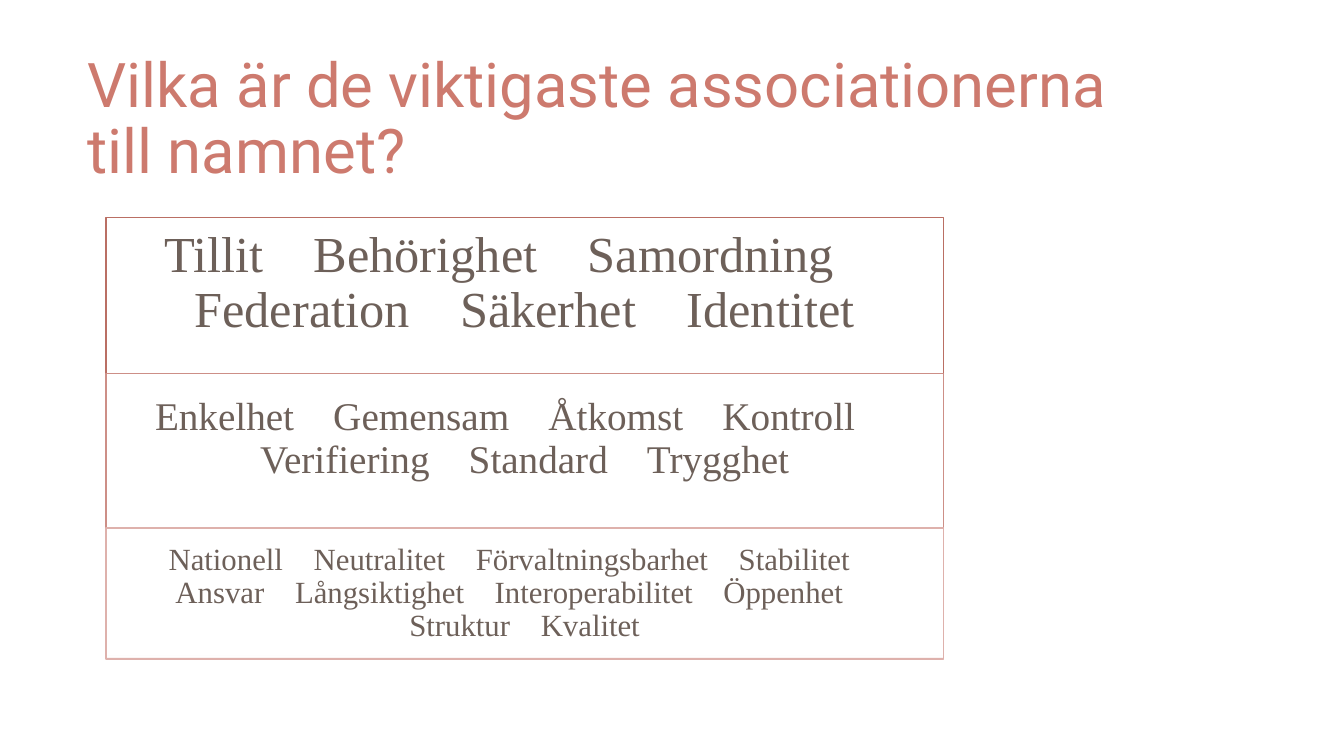
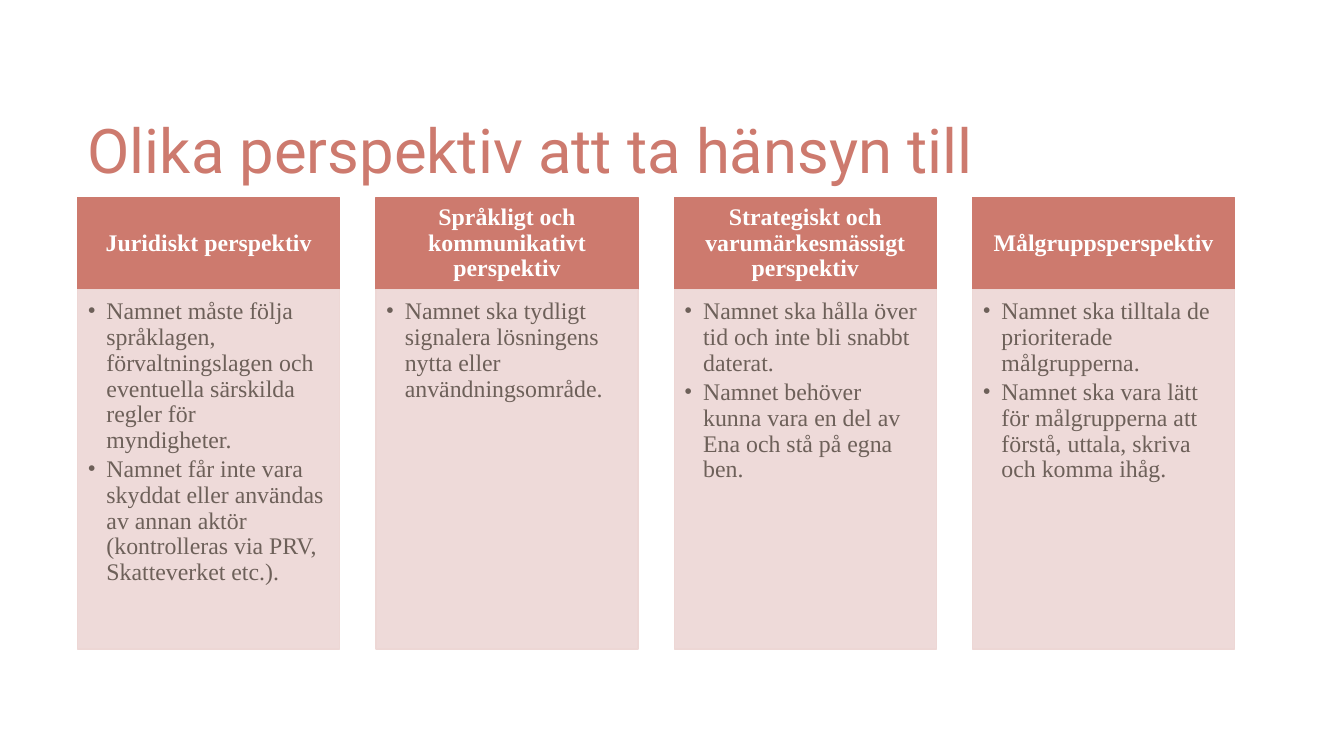
from lxml import etree
from pptx import Presentation
from pptx.dml.color import RGBColor
from pptx.enum.shapes import MSO_SHAPE
from pptx.enum.text import MSO_ANCHOR, PP_ALIGN
from pptx.oxml.ns import qn
from pptx.util import Pt

RECTANGLE = MSO_SHAPE.RECTANGLE
TOP, MIDDLE, BOTTOM = MSO_ANCHOR.TOP, MSO_ANCHOR.MIDDLE, MSO_ANCHOR.BOTTOM
LEFT, CENTER = PP_ALIGN.LEFT, PP_ALIGN.CENTER

TITLE_FONT, BODY_FONT = "Roboto", "Times New Roman"
CORAL, PALE_PINK, BROWN, WHITE = "CD7A6E", "EDD7D5", "6D6059", "FFFFFF"

MARGIN_LEFT = 55.5
LINE_SPACING = 0.9
BULLET_INDENT = 13.5

TIER_LEFT, TIER_WIDTH = 75.6, 598.3
# top, height, line colour, inset, bottom inset, text size, words
TIERS = [
    (155.5, 312.9, "BA6F64", 10.8, 229.7, 36,
     ["Tillit", "Behörighet", "Samordning", "Federation", "Säkerhet", "Identitet"]),
    (266.9, 203.1, "CD8F87", 8.6, 118.1, 28,
     ["Enkelhet", "Gemensam", "Åtkomst", "Kontroll", "Verifiering", "Standard",
      "Trygghet"]),
    (377, 93.8, "DEB1AC", 6.5, 6.5, 22,
     ["Nationell", "Neutralitet", "Förvaltningsbarhet", "Stabilitet", "Ansvar",
      "Långsiktighet", "Interoperabilitet", "Öppenhet", "Struktur", "Kvalitet"]),
]
EM_SPACE = chr(0x2003)

COLUMN_WIDTH, COLUMN_STEP = 187.2, 213.1
HEADER_TOP, HEADER_HEIGHT, BODY_HEIGHT = 141.1, 65.6, 257
PERSPECTIVES = [
    ("Juridiskt perspektiv",
     ["Namnet måste följa språklagen, förvaltningslagen och eventuella särskilda "
      "regler för myndigheter.",
      "Namnet får inte vara skyddat eller användas av annan aktör "
      "(kontrolleras via PRV, Skatteverket etc.)."]),
    ("Språkligt och kommunikativt perspektiv",
     ["Namnet ska tydligt signalera lösningens nytta eller användningsområde."]),
    ("Strategiskt och varumärkesmässigt perspektiv",
     ["Namnet ska hålla över tid och inte bli snabbt daterat.",
      "Namnet behöver kunna vara en del av Ena och stå på egna ben."]),
    ("Målgruppsperspektiv",
     ["Namnet ska tilltala de prioriterade målgrupperna.",
      "Namnet ska vara lätt för målgrupperna att förstå, uttala, skriva och "
      "komma ihåg."]),
]


def rgb(color):
    return RGBColor.from_string(color)


def add_bullet(paragraph):
    properties = paragraph._p.get_or_add_pPr()
    properties.set("marL", str(Pt(BULLET_INDENT)))
    properties.set("indent", str(-Pt(BULLET_INDENT)))
    etree.SubElement(properties, qn("a:buFont")).set("typeface", BODY_FONT)
    etree.SubElement(properties, qn("a:buChar")).set("char", "•")


def set_text(shape, lines, size, color, font=BODY_FONT, bold=False, align=CENTER,
             anchor=MIDDLE, insets=(7.2, 3.6, 7.2, 3.6), bulleted=False):
    """Fill a shape with one paragraph per line; insets are left, top, right, bottom."""
    frame = shape.text_frame
    frame.text = "\n".join(lines)
    frame.word_wrap = True
    frame.vertical_anchor = anchor
    (frame.margin_left, frame.margin_top,
     frame.margin_right, frame.margin_bottom) = map(Pt, insets)
    for paragraph in frame.paragraphs:
        paragraph.alignment = align
        paragraph.line_spacing = LINE_SPACING
        if bulleted:
            paragraph.space_after = Pt(0.15 * size)
            add_bullet(paragraph)
        for run in paragraph.runs:
            run.font.name = font
            run.font.size = Pt(size)
            run.font.bold = bold
            run.font.color.rgb = rgb(color)


def add_panel(slide, left, top, width, height, fill, line, opacity=100):
    panel = slide.shapes.add_shape(RECTANGLE, Pt(left), Pt(top), Pt(width), Pt(height))
    panel.shadow.inherit = False
    panel.fill.solid()
    panel.fill.fore_color.rgb = rgb(fill)
    panel.line.color.rgb = rgb(line)
    panel.line.width = Pt(1)
    if opacity < 100:
        fill_color = panel._element.spPr.find(qn("a:solidFill"))[0]
        etree.SubElement(fill_color, qn("a:alpha")).set("val", str(opacity * 1000))
    return panel


def add_titled_slide(presentation, title):
    slide = presentation.slides.add_slide(presentation.slide_layouts[6])
    heading = slide.shapes.add_textbox(Pt(MARGIN_LEFT), Pt(75.4), Pt(779), Pt(61.6))
    set_text(heading, [title], 44, CORAL, TITLE_FONT, align=LEFT, anchor=BOTTOM)
    return slide


def add_tier(slide, top, height, line, inset, bottom_inset, size, words):
    tier = add_panel(slide, TIER_LEFT, top, TIER_WIDTH, height, WHITE, line, 90)
    set_text(tier, [EM_SPACE.join(words)], size, BROWN,
             insets=(inset, inset, inset, bottom_inset))


def add_perspective(slide, left, name, points):
    header = add_panel(slide, left, HEADER_TOP, COLUMN_WIDTH, HEADER_HEIGHT,
                       CORAL, CORAL)
    set_text(header, [name], 17, WHITE, bold=True, insets=(9.4, 5.8, 9.4, 5.8))
    body = add_panel(slide, left, HEADER_TOP + HEADER_HEIGHT, COLUMN_WIDTH,
                     BODY_HEIGHT, PALE_PINK, PALE_PINK, 90)
    set_text(body, points, 17, BROWN, align=LEFT, anchor=TOP,
             insets=(7.2, 7.2, 9.4, 10.8), bulleted=True)


def main():
    presentation = Presentation()
    presentation.slide_width, presentation.slide_height = Pt(960), Pt(540)

    associations = add_titled_slide(
        presentation, "Vilka är de viktigaste associationerna till namnet?")
    for tier in TIERS:
        add_tier(associations, *tier)

    perspectives = add_titled_slide(presentation, "Olika perspektiv att ta hänsyn till")
    for column, (name, points) in enumerate(PERSPECTIVES):
        add_perspective(perspectives, MARGIN_LEFT + column * COLUMN_STEP, name, points)

    presentation.save("out.pptx")


if __name__ == "__main__":
    main()
